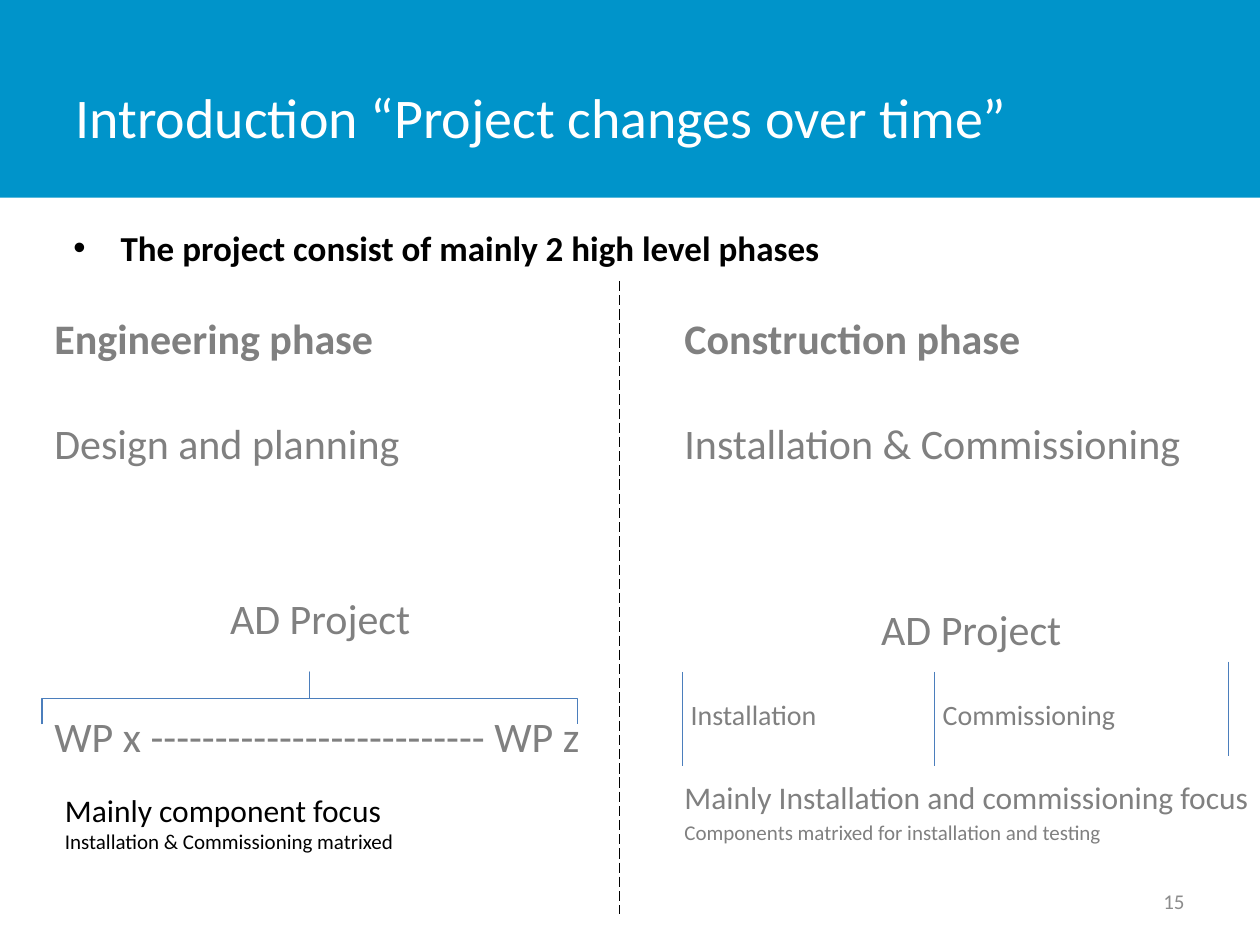
from dataclasses import dataclass

from lxml import etree
from pptx import Presentation
from pptx.dml.color import RGBColor
from pptx.enum import dml, shapes, text
from pptx.oxml import ns
from pptx.util import Pt


@dataclass(frozen=True)
class Theme:
    font: str = "Calibri"
    band: str = "0094CA"
    white: str = "FFFFFF"
    black: str = "000000"
    grey: str = "808080"
    number: str = "8C8C8C"
    line: str = "4B7EBC"
    title: int = 32
    body: int = 24
    lead: int = 20
    focus: int = 18
    label: int = 16
    small: int = 12


T = Theme()
CENTER = text.PP_ALIGN.CENTER
RIGHT = text.PP_ALIGN.RIGHT
MIDDLE = text.MSO_ANCHOR.MIDDLE
BOTTOM = text.MSO_ANCHOR.BOTTOM


def rgb(value):
    return RGBColor.from_string(value)


def add_run(p, words, size, color, bold=False):
    r = p.add_run()
    r.text = words
    f = r.font
    f.name, f.size, f.bold = T.font, Pt(size), bold
    f.color.rgb = rgb(color)


def add_text(s, box, lines, color, bold=False, anchor=text.MSO_ANCHOR.TOP):
    """Each line is (words, size, space before, alignment)."""
    sp = s.shapes.add_textbox(*map(Pt, box))
    tf = sp.text_frame
    tf.word_wrap = True
    tf.vertical_anchor = anchor
    for i, (words, size, before, align) in enumerate(lines):
        p = tf.add_paragraph() if i else tf.paragraphs[0]
        p.alignment = align
        p.space_before = Pt(before)
        add_run(p, words, size, color, bold)
    return sp


def set_bullet(p, indent):
    pPr = p._p.get_or_add_pPr()
    pPr.set("marL", str(Pt(indent)))
    pPr.set("indent", str(-Pt(indent)))
    etree.SubElement(pPr, ns.qn("a:buFont")).set("typeface", "Arial")
    etree.SubElement(pPr, ns.qn("a:buChar")).set("char", "•")


def set_tab(p, position):
    tabs = etree.SubElement(p._p.get_or_add_pPr(), ns.qn("a:tabLst"))
    tab = etree.SubElement(tabs, ns.qn("a:tab"))
    tab.set("pos", str(Pt(position)))
    tab.set("algn", "l")


def add_line(s, x, top, bottom, color, dash=None):
    c = s.shapes.add_connector(
        shapes.MSO_CONNECTOR.STRAIGHT, Pt(x), Pt(top), Pt(x), Pt(bottom))
    c.line.color.rgb = rgb(color)
    c.line.width = Pt(0.75)
    if dash:
        c.line.dash_style = dash
    etree.SubElement(c._element.spPr, ns.qn("a:effectLst"))


def add_title(s, words):
    # Band goes behind the title placeholder
    band = s.shapes.add_shape(
        shapes.MSO_SHAPE.RECTANGLE, 0, 0, Pt(720), Pt(113))
    band.shadow.inherit = False
    band.fill.solid()
    band.fill.fore_color.rgb = rgb(T.band)
    band.line.fill.background()
    s.shapes._spTree.insert(2, band._element)

    sp = s.shapes.title
    sp.left, sp.top, sp.width, sp.height = map(Pt, (36, 21.6, 562.3, 90))
    tf = sp.text_frame
    tf.auto_size = text.MSO_AUTO_SIZE.NONE
    tf.vertical_anchor = MIDDLE
    p = tf.paragraphs[0]
    p.alignment = text.PP_ALIGN.LEFT
    add_run(p, words, T.title, T.white)


def add_phase(s, left, width, heading, lines):
    add_text(s, (left, 160.5, 318, 50.5), [(heading, T.body, 0, None)],
             T.grey, bold=True, anchor=BOTTOM)
    return add_text(s, (left, 235.2, width, 281), lines, T.grey)


def add_brace(s, center_x, center_y, width, height):
    # A left brace turned upwards, with square corners
    sp = s.shapes.add_shape(
        shapes.MSO_SHAPE.LEFT_BRACE, Pt(center_x - height / 2),
        Pt(center_y - width / 2), Pt(height), Pt(width))
    sp.rotation = 90
    sp.adjustments[0], sp.adjustments[1] = 0, 0.5
    sp.shadow.inherit = False
    sp.fill.background()
    sp.line.color.rgb = rgb(T.line)
    sp.line.width = Pt(0.75)


def main():
    prs = Presentation()
    prs.slide_width, prs.slide_height = Pt(720), Pt(540)
    s = prs.slides.add_slide(prs.slide_layouts[5])
    add_title(s, "Introduction “Project changes over time”")

    # Lead bullet
    sp = add_text(s, (34.8, 126, 444, 31.5), [
        ("The project consist of mainly 2 high level phases", T.lead, 0, None),
    ], T.black, bold=True)
    set_bullet(sp.text_frame.paragraphs[0], 27)

    # Engineering phase
    add_phase(s, 24, 318, "Engineering phase", [
        ("Design and planning", T.body, 0, None),
        ("AD Project", T.body, 71.3, CENTER),
        ("WP x -------------------------- WP z", T.body, 38.5, None),
    ])
    add_brace(s, 177, 399, 306, 30)
    add_text(s, (30, 448.5, 250, 44), [
        ("Mainly component focus", T.focus, 0, None),
        ("Installation & Commissioning matrixed", T.small, 0, None),
    ], T.black)

    # Construction phase, with the second label tabbed past its line
    sp = add_phase(s, 384, 342, "Construction phase", [
        ("Installation & Commissioning", T.body, 0, None),
        ("AD Project", T.body, 77.5, CENTER),
        (" Installation \t Commissioning", T.label, 25, None),
        ("Mainly Installation and commissioning focus", T.focus, 26.5, None),
        ("Components matrixed for installation and testing", T.small, 2, None),
    ])
    set_tab(sp.text_frame.paragraphs[2], 144)
    for x, top in ((390, 384), (534, 384), (702, 378)):
        add_line(s, x, top, top + 54, T.line)

    # Divider and slide number
    add_line(s, 354, 160.5, 522, T.black, dml.MSO_LINE.LONG_DASH)
    add_text(s, (516, 500.5, 168, 28.8), [("15", T.small, 0, RIGHT)],
             T.number, anchor=MIDDLE)

    prs.save("out.pptx")


if __name__ == "__main__":
    main()
